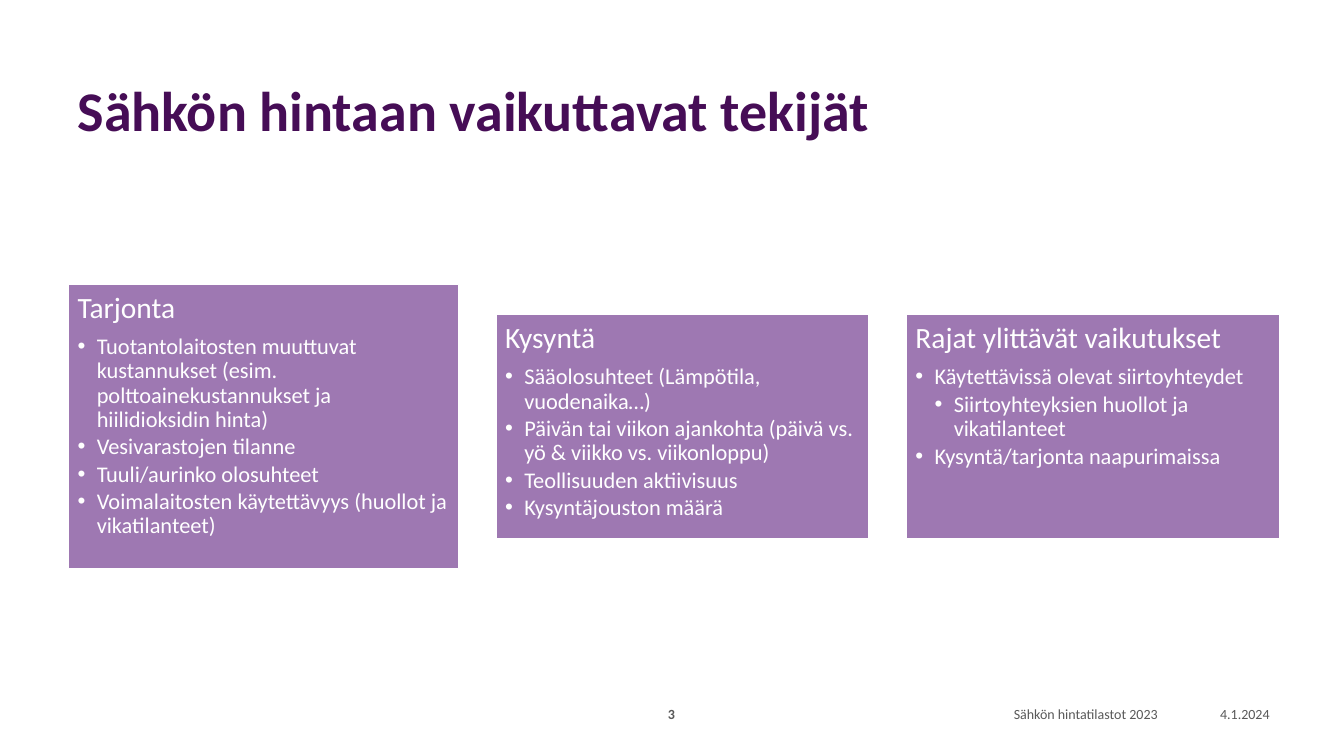
from lxml.etree import SubElement
from pptx import Presentation
from pptx.dml.color import RGBColor
from pptx.enum.shapes import MSO_SHAPE
from pptx.enum.text import MSO_ANCHOR as Anchor, PP_ALIGN as Align
from pptx.oxml.ns import qn
from pptx.util import Inches, Pt

PLUM = RGBColor(0x46, 0x0D, 0x56)
LILAC = RGBColor(0x9E, 0x78, 0xB2)
WHITE = RGBColor(0xFF, 0xFF, 0xFF)
GREY = RGBColor(0x59, 0x59, 0x59)
FONT = "Calibri"

TITLE = "Sähkön hintaan vaikuttavat tekijät"
CARDS = [
    ("Tarjonta", 3.87, 2.82, [
        (1, "Tuotantolaitosten muuttuvat kustannukset (esim. polttoainekustannukset ja hiilidioksidin hinta)"),
        (1, "Vesivarastojen tilanne"),
        (1, "Tuuli/aurinko olosuhteet"),
        (1, "Voimalaitosten käytettävyys (huollot ja vikatilanteet)"),
    ]),
    ("Kysyntä", 3.7, 2.22, [
        (1, "Sääolosuhteet (Lämpötila, vuodenaika…)"),
        (1, "Päivän tai viikon ajankohta (päivä vs. yö & viikko vs. viikonloppu)"),
        (1, "Teollisuuden aktiivisuus"),
        (1, "Kysyntäjouston määrä"),
    ]),
    ("Rajat ylittävät vaikutukset", 3.7, 2.22, [
        (1, "Käytettävissä olevat siirtoyhteydet"),
        (2, "Siirtoyhteyksien huollot ja vikatilanteet"),
        (1, "Kysyntä/tarjonta naapurimaissa"),
    ]),
]
FOOTER = [
    ("3", 6.36, 0.6, Align.CENTER, True),
    ("Sähkön hintatilastot 2023", 7.41, 4.17, Align.RIGHT, False),
    ("4.1.2024", 11.58, 1.11, Align.RIGHT, False),
]
CARDS_LEFT, CARDS_MIDDLE, CARD_GAP = 0.68, 4.23, 0.37
CARD_INSET, INDENT = 0.09, 0.19
FOOTER_TOP, FOOTER_HEIGHT = 6.95, 0.27


def style(p, size, color, bold=False):
    for r in p.runs:
        r.font.name, r.font.size, r.font.bold = FONT, Pt(size), bold
        r.font.color.rgb = color


def add_bullet(p, level):
    p.level = level
    pPr = p._p.get_or_add_pPr()
    pPr.set("marL", str(Inches(INDENT * level)))
    pPr.set("indent", str(-Inches(INDENT)))
    SubElement(pPr, qn("a:buFont")).set("typeface", "Arial")
    SubElement(pPr, qn("a:buChar")).set("char", "•")


def add_card(s, left, heading, width, height, items):
    sp = s.shapes.add_shape(MSO_SHAPE.RECTANGLE, Inches(left),
                            Inches(CARDS_MIDDLE - height / 2), Inches(width), Inches(height))
    sp.shadow.inherit = False
    sp.fill.solid()
    sp.fill.fore_color.rgb = LILAC
    sp.line.color.rgb = WHITE
    sp.line.width = Pt(1)
    tf = sp.text_frame
    tf.word_wrap = True
    tf.vertical_anchor = Anchor.TOP
    tf.margin_left = tf.margin_right = tf.margin_top = tf.margin_bottom = Inches(CARD_INSET)
    for i, (level, text) in enumerate([(0, heading)] + items):
        p = tf.add_paragraph() if i else tf.paragraphs[0]
        p.text = text
        if level:
            add_bullet(p, level)
        size, after = (16, 0.15) if level else (21, 0.35)
        p.alignment = Align.LEFT
        p.line_spacing = 0.9
        p.space_after = Pt(round(size * after, 1))
        style(p, size, WHITE)


def add_footer(s, text, left, width, align, bold):
    sp = s.shapes.add_textbox(Inches(left), Inches(FOOTER_TOP), Inches(width), Inches(FOOTER_HEIGHT))
    tf = sp.text_frame
    tf.word_wrap = True
    tf.vertical_anchor = Anchor.MIDDLE
    tf.text = text
    p = tf.paragraphs[0]
    p.alignment = align
    style(p, 10, GREY, bold)


def main():
    prs = Presentation()
    prs.slide_width, prs.slide_height = Inches(13.33), Inches(7.5)
    s = prs.slides.add_slide(prs.slide_layouts[5])

    title = s.shapes.title
    title.left, title.top = Inches(0.67), Inches(0.4)
    title.width, title.height = Inches(10.37), Inches(1.45)
    tf = title.text_frame
    tf.text = TITLE
    tf.vertical_anchor = Anchor.MIDDLE
    p = tf.paragraphs[0]
    p.alignment = Align.LEFT
    p.line_spacing = 0.9
    style(p, 40, PLUM, True)

    left = CARDS_LEFT
    for heading, width, height, items in CARDS:
        add_card(s, left, heading, width, height, items)
        left += width + CARD_GAP
    for part in FOOTER:
        add_footer(s, *part)
    prs.save("out.pptx")


if __name__ == "__main__":
    main()
